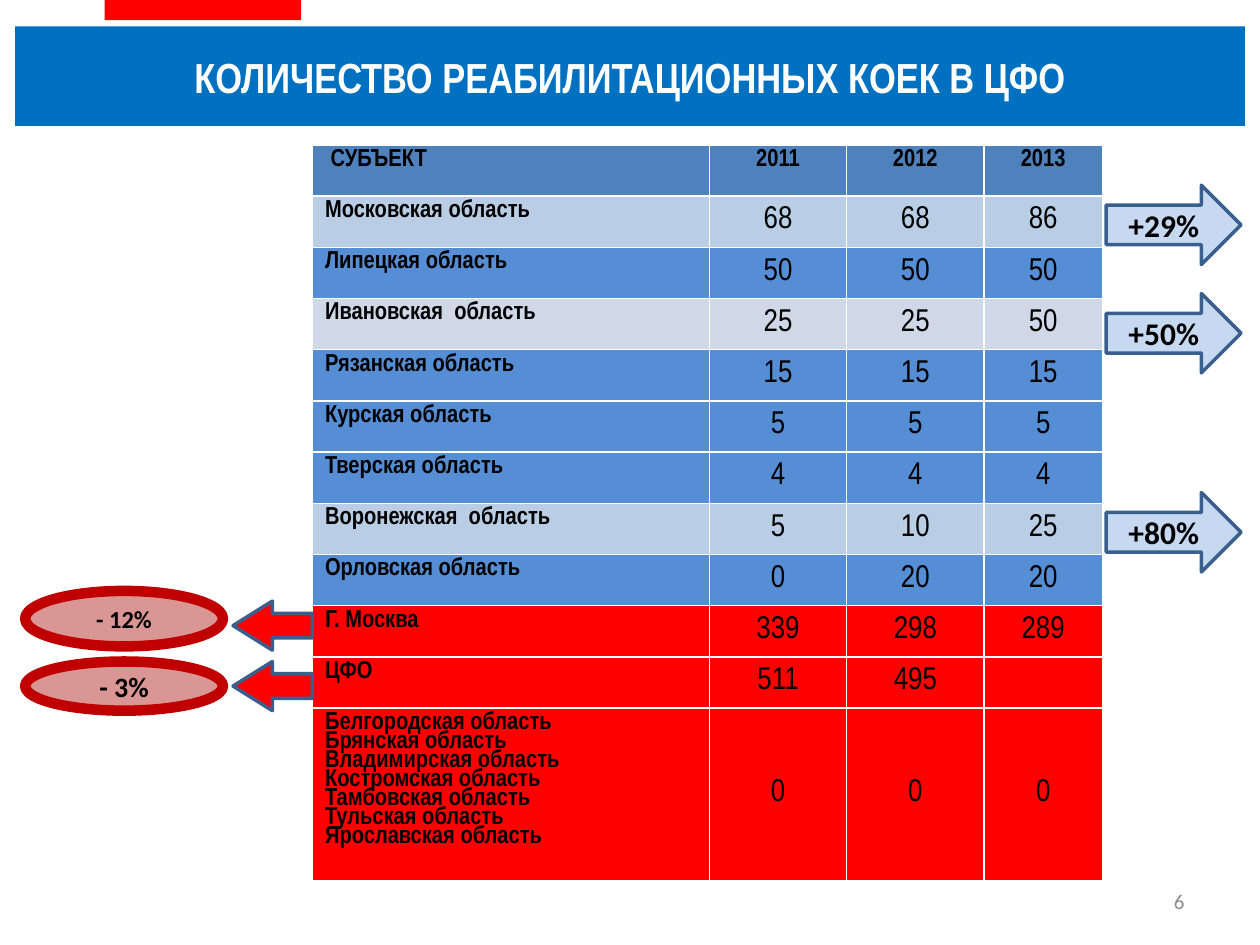
from pptx import Presentation
from pptx.dml.color import RGBColor
from pptx.enum.shapes import MSO_SHAPE
from pptx.enum.text import MSO_ANCHOR, PP_ALIGN
from pptx.util import Inches, Pt

RECT, OVAL = MSO_SHAPE.RECTANGLE, MSO_SHAPE.OVAL
RIGHT_ARROW, LEFT_ARROW = MSO_SHAPE.RIGHT_ARROW, MSO_SHAPE.LEFT_ARROW
LEFT, CENTER, RIGHT = PP_ALIGN.LEFT, PP_ALIGN.CENTER, PP_ALIGN.RIGHT
TOP, MIDDLE = MSO_ANCHOR.TOP, MSO_ANCHOR.MIDDLE

THEME = {
    "banner": "0070C0", "red": "FF0000", "header": "4F81BD", "blue": "558ED5",
    "light": "B9CDE5", "pale": "D0D8E8", "growth": "C6D9F1", "outline": "3A5F8C",
    "decline": "D99694", "ring": "C00000",
    "title": {"size": Pt(24), "bold": True, "name": "Arial Narrow", "color": "FFFFFF"},
    "label": {"size": Pt(14), "bold": True, "name": "Arial Narrow", "color": "000000"},
    "number": {"size": Pt(18), "bold": False, "name": "Arial Narrow", "color": "000000"},
    "growth_text": {"size": Pt(18), "bold": True, "name": "Calibri", "color": "000000"},
    "moscow_text": {"size": Pt(14), "bold": True, "name": "Calibri", "color": "000000"},
    "district_text": {"size": Pt(16), "bold": True, "name": "Calibri", "color": "000000"},
    "page": {"size": Pt(12), "bold": False, "name": "Calibri", "color": "8C8C8C"},
}
LINE_SPACING = 0.82


def write(tf, text, style, align, anchor=MIDDLE, spacing=None):
    """Fill a text frame, one paragraph per line of text."""
    tf.word_wrap = True
    tf.vertical_anchor = anchor
    for i, line in enumerate(text.split("\n")):
        p = tf.paragraphs[0] if i == 0 else tf.add_paragraph()
        p.alignment = align
        p.line_spacing = spacing
        r = p.add_run()
        r.text = line
        for name, value in THEME[style].items():
            if name == "color":
                r.font.color.rgb = RGBColor.from_string(value)
            else:
                setattr(r.font, name, value)


def add_figure(kind, box, fill, line=None, width=2):
    sp = s.shapes.add_shape(kind, *(Inches(v) for v in box))
    sp.shadow.inherit = False
    sp.fill.solid()
    sp.fill.fore_color.rgb = RGBColor.from_string(THEME[fill])
    if line:
        sp.line.color.rgb = RGBColor.from_string(THEME[line])
        sp.line.width = Pt(width)
    else:
        sp.line.fill.background()
    return sp


prs = Presentation()
prs.slide_width, prs.slide_height = Inches(10), Inches(7.5)
s = prs.slides.add_slide(prs.slide_layouts[5])

# Title banner and red tab
title = s.shapes.title
title.left, title.top, title.width, title.height = (
    Inches(v) for v in (0.12, 0.21, 9.76, 0.79))
title.fill.solid()
title.fill.fore_color.rgb = RGBColor.from_string(THEME["banner"])
write(title.text_frame, "КОЛИЧЕСТВО РЕАБИЛИТАЦИОННЫХ КОЕК В ЦФО", "title", CENTER)
add_figure(RECT, (0.83, 0, 1.56, 0.16), "red")

# Table of beds by region
no_beds = "\n".join(f"{name} область" for name in (
    "Белгородская", "Брянская", "Владимирская", "Костромская",
    "Тамбовская", "Тульская", "Ярославская"))
rows = [
    ("header", " СУБЪЕКТ", 2011, 2012, 2013),
    ("light", "Московская область", 68, 68, 86),
    ("blue", "Липецкая область", 50, 50, 50),
    ("pale", "Ивановская  область", 25, 25, 50),
    ("blue", "Рязанская область", 15, 15, 15),
    ("blue", "Курская область", 5, 5, 5),
    ("blue", "Тверская область", 4, 4, 4),
    ("light", "Воронежская  область", 5, 10, 25),
    ("blue", "Орловская область", 0, 20, 20),
    ("red", "Г. Москва", 339, 298, 289),
    ("red", "ЦФО", 511, 495, ""),
    ("red", no_beds, 0, 0, 0),
]
table = s.shapes.add_table(len(rows), 4, Inches(2.48), Inches(1.15),
                           Inches(6.27), Inches(5.84)).table
for col, width in zip(table.columns, (3.15, 1.09, 1.09, 0.94)):
    col.width = Inches(width)
for row in table.rows:
    row.height = Inches(4.47 / 11)
table.rows[len(rows) - 1].height = Inches(1.37)

for i, (fill, *values) in enumerate(rows):
    for j, value in enumerate(values):
        cell = table.cell(i, j)
        cell.fill.solid()
        cell.fill.fore_color.rgb = RGBColor.from_string(THEME[fill])
        is_label = i == 0 or j == 0
        anchor = TOP if is_label else MIDDLE
        cell.vertical_anchor = anchor
        if value != "":
            write(cell.text_frame, str(value), "label" if is_label else "number",
                  CENTER if j else LEFT, anchor, LINE_SPACING)

# Growth arrows to the right of the table
for top, text in ((1.47, "+29%"), (2.33, "+50%"), (3.91, "+80%")):
    sp = add_figure(RIGHT_ARROW, (8.78, top, 1.07, 0.63), "growth", "outline")
    write(sp.text_frame, text, "growth_text", CENTER)

# Decline ovals and their arrows to the left of the table
declines = [
    (4.69, 0.44, 4.77, "- 12%", "moscow_text"),
    (5.25, 0.39, 5.25, "- 3%", "district_text"),
]
for oval_top, oval_height, arrow_top, text, style in declines:
    sp = add_figure(OVAL, (0.2, oval_top, 1.57, oval_height), "decline", "ring", 6)
    write(sp.text_frame, text, style, CENTER)
    arrow = add_figure(LEFT_ARROW, (1.85, arrow_top, 0.63, 0.39), "red", "outline")
    arrow.adjustments[1] = 0.8

# Page number
page = s.shapes.add_textbox(Inches(7.17), Inches(6.95), Inches(2.33), Inches(0.4))
write(page.text_frame, "6", "page", RIGHT)

prs.save("out.pptx")
